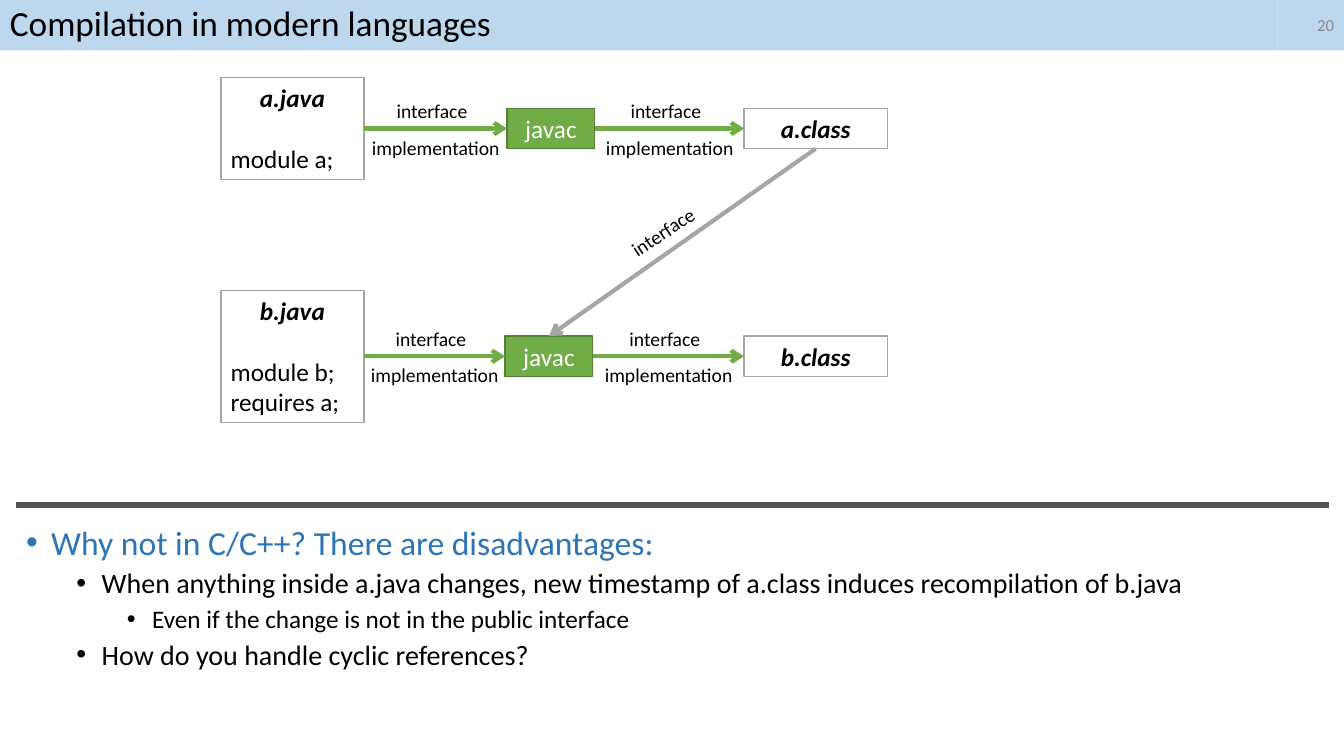
import pptx
import pptx.util
import pptx.dml.color
import pptx.enum.shapes
import pptx.enum.text
import pptx.oxml.xmlchemy

Inches = pptx.util.Inches
Pt = pptx.util.Pt
ALIGN = pptx.enum.text.PP_ALIGN
ANCHOR = pptx.enum.text.MSO_ANCHOR

BLACK, WHITE, GREEN, GRAY = "000000", "FFFFFF", "70AD47", "A5A5A5"
HEADER_BLUE = "BDD7EE"


def color(hex_code):
    return pptx.dml.color.RGBColor.from_string(hex_code)


def add_xml(parent, tag, **attributes):
    element = pptx.oxml.xmlchemy.OxmlElement(tag)
    for key, value in attributes.items():
        element.set(key, str(value))
    parent.append(element)


def write(frame, text, size=18, ink=BLACK, bold=False, italic=False,
          align=ALIGN.LEFT, before=0, line_spacing=None, bullet_level=None):
    paragraph = frame.paragraphs[0]
    if paragraph.runs:
        paragraph = frame.add_paragraph()
    paragraph.alignment = align
    paragraph.space_before = Pt(before)
    if line_spacing:
        paragraph.line_spacing = line_spacing
    if bullet_level is not None:
        paragraph.level = bullet_level
        properties = paragraph._p.get_or_add_pPr()
        properties.set("marL", str(Inches(0.25 + 0.5 * bullet_level)))
        properties.set("indent", str(Inches(-0.25)))
        add_xml(properties, "a:buFont", typeface="Arial")
        add_xml(properties, "a:buChar", char="•")
    run = paragraph.add_run()
    run.text = text
    run.font.name = "Calibri"
    run.font.size = Pt(size)
    run.font.bold = bold
    run.font.italic = italic
    run.font.color.rgb = color(ink)


def add_box(slide, left, top, width, height, fill, outline=None, anchor=ANCHOR.TOP):
    box = slide.shapes.add_shape(
        pptx.enum.shapes.MSO_SHAPE.RECTANGLE,
        Inches(left), Inches(top), Inches(width), Inches(height))
    box.shadow.inherit = False
    box.fill.solid()
    box.fill.fore_color.rgb = color(fill)
    if outline:
        box.line.color.rgb = color(outline)
        box.line.width = Pt(1)
    else:
        box.line.fill.background()
    box.text_frame.word_wrap = True
    box.text_frame.vertical_anchor = anchor
    return box


def add_line(slide, ink, weight, start=(0, 0), end=(0, 0)):
    line = slide.shapes.add_connector(
        pptx.enum.shapes.MSO_CONNECTOR.STRAIGHT,
        *(Inches(value) for value in (*start, *end)))
    line.line.color.rgb = color(ink)
    line.line.width = Pt(weight)
    add_xml(line._element.spPr, "a:effectLst")
    return line


def add_arrow(slide, source, source_side, target, target_side, ink):
    arrow = add_line(slide, ink, 3)
    arrow.begin_connect(source, source_side)
    arrow.end_connect(target, target_side)
    add_xml(arrow.line._get_or_add_ln(), "a:tailEnd", type="arrow")


def add_label(slide, text, center, top, width, rotation=0):
    label = slide.shapes.add_textbox(
        Inches(center - width / 2), Inches(top), Inches(width), Inches(0.34))
    label.text_frame.word_wrap = False
    label.rotation = rotation
    write(label.text_frame, text, size=14)


def add_header(slide, left, top, width, height, title, number):
    number_width = 0.66
    title_width = width - number_width
    number_bar = add_box(slide, left + title_width, top, number_width, height,
                         HEADER_BLUE, anchor=ANCHOR.MIDDLE)
    write(number_bar.text_frame, number, size=12, ink="8C8C8C", align=ALIGN.RIGHT)
    title_bar = add_box(slide, left, top, title_width, height,
                        HEADER_BLUE, anchor=ANCHOR.MIDDLE)
    write(title_bar.text_frame, title, size=25.2, line_spacing=0.9)


def add_compilation(slide, left, top, height, module, statements, compiler_left):
    file_width, step_height, compiler_width = 1.42, 0.4, 0.87
    class_left = left + 5.19
    axis = top + height / 2
    step_top = axis - step_height / 2
    heading = dict(bold=True, italic=True, align=ALIGN.CENTER)

    source = add_box(slide, left, top, file_width, height, WHITE, GRAY)
    write(source.text_frame, f"{module}.java", **heading)
    for index, statement in enumerate(statements):
        write(source.text_frame, statement, before=0 if index else 22)

    compiler = add_box(slide, compiler_left, step_top, compiler_width, step_height,
                       GREEN, "538035")
    write(compiler.text_frame, "javac", ink=WHITE, align=ALIGN.CENTER)
    compiled = add_box(slide, class_left, step_top, file_width, step_height, WHITE, GRAY)
    write(compiled.text_frame, f"{module}.class", **heading)

    add_arrow(slide, source, 3, compiler, 1, GREEN)
    add_arrow(slide, compiler, 3, compiled, 1, GREEN)
    for gap_start, gap_end in ((left + file_width, compiler_left),
                               (compiler_left + compiler_width, class_left)):
        middle = (gap_start + gap_end) / 2
        add_label(slide, "interface", middle - 0.03, axis - 0.34, 0.91)
        add_label(slide, "implementation", middle + 0.01, axis + 0.02, 1.48)
    return compiler, compiled


def add_diagram(slide, left, top):
    _, a_class = add_compilation(slide, left, top, 1.01, "a", ["module a;"], left + 2.84)
    b_compiler, _ = add_compilation(slide, left, top + 2.11, 1.31, "b",
                                    ["module b;", "requires a;"], left + 2.82)
    add_arrow(slide, a_class, 2, b_compiler, 0, GRAY)
    add_label(slide, "interface", left + 4.39, top + 1.36, 0.91, rotation=326.6)


def add_discussion(slide, left, top, width, height):
    add_line(slide, "525252", 4, (left, top), (left + width, top))
    discussion = slide.shapes.add_textbox(
        Inches(left), Inches(top + 0.16), Inches(width), Inches(height - 0.16))
    discussion.text_frame.word_wrap = True
    styles = [dict(size=24, ink="2E75B6", before=10),
              dict(size=20, before=5),
              dict(size=18, before=5)]
    points = [
        (0, "Why not in C/C++? There are disadvantages:"),
        (1, "When anything inside a.java changes, new timestamp of a.class "
            "induces recompilation of b.java"),
        (2, "Even if the change is not in the public interface"),
        (1, "How do you handle cyclic references?"),
    ]
    for level, point in points:
        write(discussion.text_frame, point, bullet_level=level,
              line_spacing=0.9, **styles[level])


def main():
    presentation = pptx.Presentation()
    presentation.slide_width = Inches(13.33)
    presentation.slide_height = Inches(7.5)
    slide = presentation.slides.add_slide(presentation.slide_layouts[6])
    add_header(slide, 0, 0, 13.33, 0.5, "Compilation in modern languages", "20")
    add_diagram(slide, 2.19, 0.77)
    add_discussion(slide, 0.16, 5.01, 13.02, 2.05)
    presentation.save("out.pptx")


if __name__ == "__main__":
    main()
